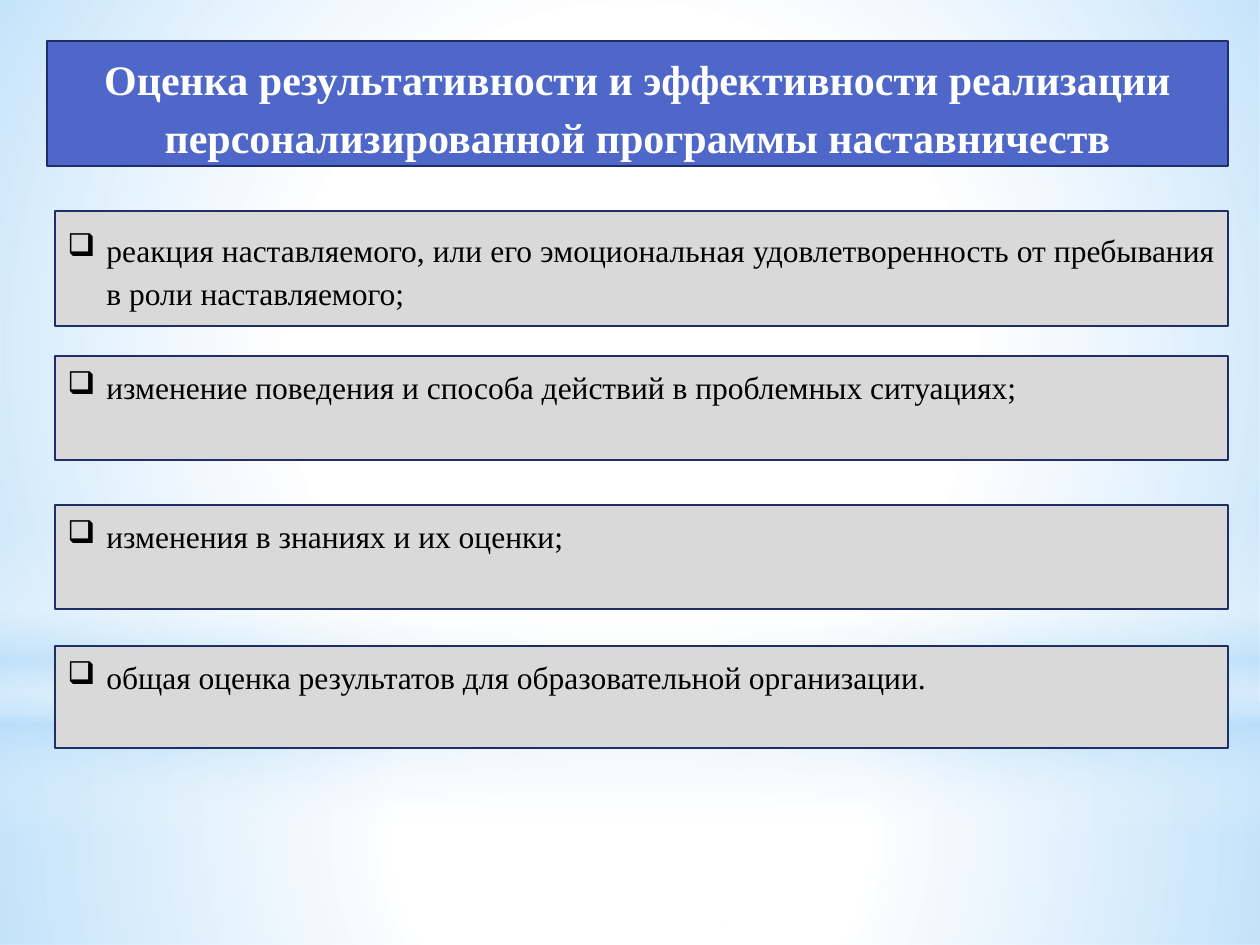
from dataclasses import dataclass
from typing import NamedTuple, Optional

from lxml.etree import SubElement
from pptx import Presentation
from pptx.dml.color import RGBColor
from pptx.enum.shapes import MSO_SHAPE as Preset
from pptx.enum.text import MSO_ANCHOR as Anchor, PP_ALIGN as Align
from pptx.oxml import parse_xml
from pptx.oxml.ns import nsdecls, qn
from pptx.shapes.autoshape import Shape
from pptx.slide import Slide
from pptx.text.text import _Paragraph as Paragraph
from pptx.util import Emu, Pt

PX_PER_INCH = 126


@dataclass(frozen=True)
class Theme:
    heading_fill: str = "4E67C8"
    criterion_fill: str = "D9D9D9"
    border: str = "1F2E69"
    heading_text: str = "FFFFFF"
    criterion_text: str = "000000"
    glow_light: str = "FFFFFF"
    glow_blue: str = "B4DCFA"
    font: str = "Times New Roman"
    heading_size: int = 24
    criterion_size: int = 18
    border_width: float = 1.25
    line_spacing: float = 1.15


THEME = Theme()


class Box(NamedTuple):
    left: int
    top: int
    width: int
    height: int


class Stop(NamedTuple):
    position: int
    color: str
    opacity: int


class Glow(NamedTuple):
    box: Box
    preset: Preset
    stops: tuple[Stop, ...]
    angle: Optional[int] = None


class Criterion(NamedTuple):
    text: str
    top: int
    height: int
    anchor: Anchor = Anchor.TOP


LIGHT, BLUE = THEME.glow_light, THEME.glow_blue

GLOWS = (
    Glow(Box(0, 703, 1260, 242), Preset.RECTANGLE,
         (Stop(0, LIGHT, 91), Stop(37, LIGHT, 76), Stop(100, BLUE, 79))),
    Glow(Box(0, 0, 1260, 703), Preset.RECTANGLE,
         (Stop(0, LIGHT, 89), Stop(48, LIGHT, 62), Stop(100, BLUE, 79))),
    Glow(Box(0, 519, 1260, 315), Preset.RECTANGLE,
         (Stop(0, LIGHT, 0), Stop(29, LIGHT, 30), Stop(45, BLUE, 40),
          Stop(55, LIGHT, 26), Stop(65, BLUE, 60), Stop(100, LIGHT, 0)), 90),
    Glow(Box(0, 220, 1260, 703), Preset.OVAL,
         (Stop(0, LIGHT, 100), Stop(56, LIGHT, 0))),
)

HEADING = ("Оценка результативности и эффективности реализации "
           "персонализированной программы наставничеств")
HEADING_BOX = Box(47, 41, 1181, 125)

CRITERIA = (
    Criterion("реакция наставляемого, или его эмоциональная удовлетворенность "
              "от пребывания в роли наставляемого;", 211, 115, Anchor.MIDDLE),
    Criterion("изменение поведения и способа действий в проблемных ситуациях;",
              356, 104),
    Criterion("изменения в знаниях и их оценки;", 505, 104),
    Criterion("общая оценка результатов для образовательной организации.",
              646, 102),
)
CRITERION_LEFT, CRITERION_WIDTH = 55, 1173
BULLET, BULLET_INDENT = "❑", 39


def px(length: int) -> Emu:
    return Emu(round(length * 914400 / PX_PER_INCH))


def add_preset(slide: Slide, preset: Preset, box: Box) -> Shape:
    shape = slide.shapes.add_shape(preset, *map(px, box))
    shape.shadow.inherit = False
    return shape


def draw_glow(slide: Slide, glow: Glow) -> None:
    light = add_preset(slide, glow.preset, glow.box)
    light.line.fill.background()
    light.fill.background()
    stops = "".join(
        f'<a:gs pos="{stop.position * 1000}"><a:srgbClr val="{stop.color}">'
        f'<a:alpha val="{stop.opacity * 1000}"/></a:srgbClr></a:gs>'
        for stop in glow.stops)
    if glow.angle is None:
        direction = ('<a:path path="circle"><a:fillToRect l="50000" t="50000" '
                     'r="50000" b="50000"/></a:path>')
    else:
        direction = f'<a:lin ang="{glow.angle * 60000}" scaled="0"/>'
    gradient = parse_xml(f'<a:gradFill {nsdecls("a")} rotWithShape="1">'
                         f'<a:gsLst>{stops}</a:gsLst>{direction}</a:gradFill>')
    properties = light.element.spPr
    properties.replace(properties.find(qn("a:noFill")), gradient)


def draw_panel(slide: Slide, box: Box, fill: str, anchor: Anchor,
               text: str) -> Paragraph:
    panel = add_preset(slide, Preset.RECTANGLE, box)
    panel.fill.solid()
    panel.fill.fore_color.rgb = RGBColor.from_string(fill)
    panel.line.color.rgb = RGBColor.from_string(THEME.border)
    panel.line.width = Pt(THEME.border_width)
    panel.text_frame.word_wrap = True
    panel.text_frame.vertical_anchor = anchor
    paragraph = panel.text_frame.paragraphs[0]
    paragraph.text = text
    paragraph.line_spacing = THEME.line_spacing
    return paragraph


def set_font(paragraph: Paragraph, size: int, color: str, bold: bool) -> None:
    paragraph.font.name = THEME.font
    paragraph.font.size = Pt(size)
    paragraph.font.bold = bold
    paragraph.font.color.rgb = RGBColor.from_string(color)


def draw_heading(slide: Slide) -> None:
    heading = draw_panel(slide, HEADING_BOX, THEME.heading_fill,
                         Anchor.MIDDLE, HEADING)
    heading.alignment = Align.CENTER
    heading.space_after = Pt(6)
    set_font(heading, THEME.heading_size, THEME.heading_text, True)


def draw_criterion(slide: Slide, criterion: Criterion) -> None:
    box = Box(CRITERION_LEFT, criterion.top, CRITERION_WIDTH, criterion.height)
    entry = draw_panel(slide, box, THEME.criterion_fill, criterion.anchor,
                       criterion.text)
    entry.alignment = Align.JUSTIFY
    entry.space_after = Pt(10)
    properties = entry._p.get_or_add_pPr()
    properties.set("marL", str(px(BULLET_INDENT)))
    properties.set("indent", str(-px(BULLET_INDENT)))
    SubElement(properties, qn("a:buChar"), char=BULLET)
    set_font(entry, THEME.criterion_size, THEME.criterion_text, False)


def main() -> None:
    deck = Presentation()
    deck.slide_width, deck.slide_height = px(1260), px(945)
    slide = deck.slides.add_slide(deck.slide_layouts[6])
    for glow in GLOWS:
        draw_glow(slide, glow)
    draw_heading(slide)
    for criterion in CRITERIA:
        draw_criterion(slide, criterion)
    deck.save("out.pptx")


if __name__ == "__main__":
    main()
